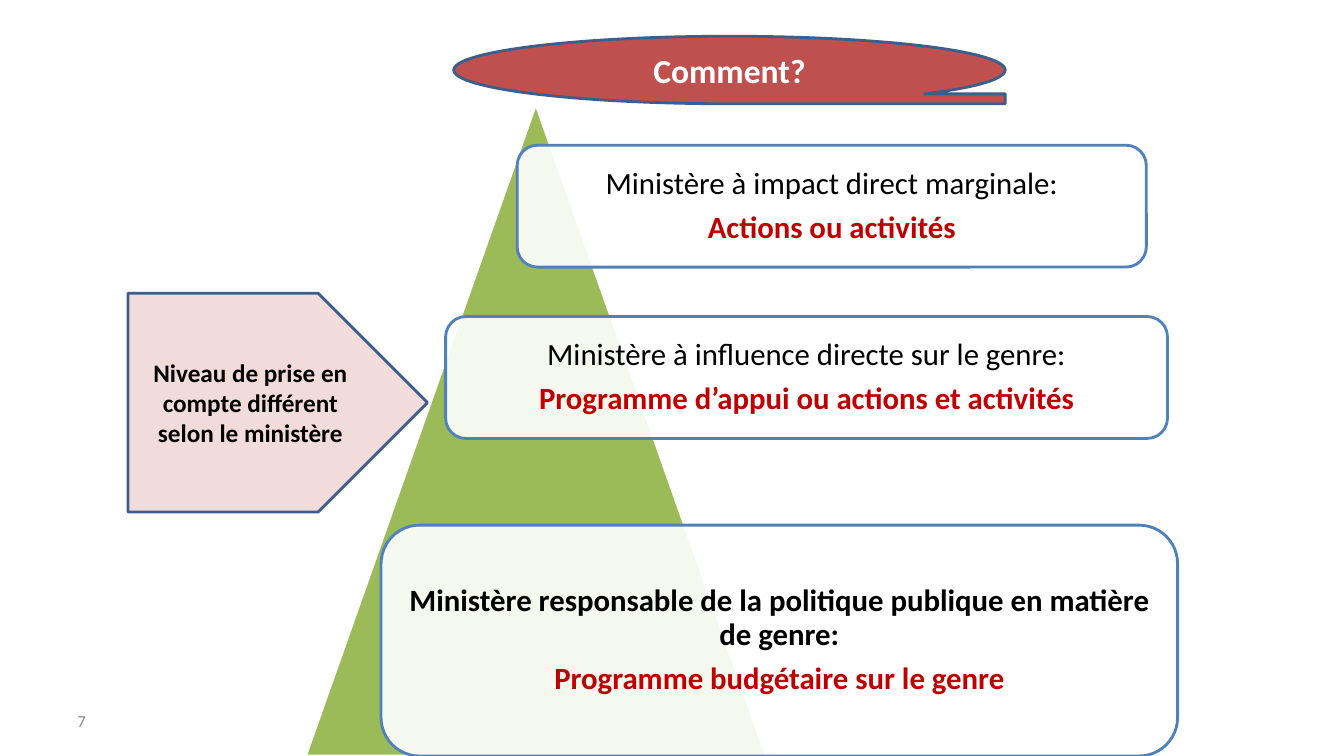
"""Build the slide on how ministries take gender into account."""
from dataclasses import dataclass

from lxml import etree
from pptx import Presentation
from pptx import util as u
from pptx.dml.color import RGBColor
from pptx.enum import shapes, text
from pptx.oxml.ns import qn
from pptx.shapes.autoshape import Shape
from pptx.slide import Slide
from pptx.text.text import TextFrame

WHITE = RGBColor(0xFF, 0xFF, 0xFF)
BLACK = RGBColor(0x00, 0x00, 0x00)
GREY = RGBColor(0x8C, 0x8C, 0x8C)
GREEN = RGBColor(0x9B, 0xBB, 0x59)
BLUE = RGBColor(0x4F, 0x81, 0xBD)
DARK_BLUE = RGBColor(0x3A, 0x5F, 0x8C)
RED = RGBColor(0xC0, 0x50, 0x4D)
DARK_RED = RGBColor(0xC0, 0x00, 0x00)
PINK = RGBColor(0xF2, 0xDC, 0xDB)
FONT = "Calibri"


@dataclass(frozen=True)
class Box:
    left: float
    top: float
    width: float
    height: float

    def lengths(self) -> tuple[u.Length, ...]:
        return tuple(u.Inches(value) for value in (self.left, self.top, self.width, self.height))


@dataclass(frozen=True)
class Line:
    words: str
    size: int
    color: RGBColor
    bold: bool = True


@dataclass(frozen=True)
class Level:
    box: Box
    ministry: str
    action: str
    bold: bool = False


TITLE_BOX = Box(4.5, 0.36, 5.47, 0.67)
PYRAMID_BOX = Box(3.03, 1.03, 4.57, 6.47)
ARROW_BOX = Box(1.27, 2.91, 2.97, 2.17)
NUMBER_BOX = Box(0.67, 6.95, 3.11, 0.4)
LEVELS = (
    Level(Box(5.13, 1.44, 6.24, 1.21), "Ministère à impact direct marginale:", "Actions ou activités"),
    Level(Box(4.42, 3.14, 7.16, 1.21), "Ministère à influence directe sur le genre:",
          "Programme d’appui ou actions et activités"),
    Level(Box(3.78, 5.21, 7.9, 2.29), "Ministère responsable de la politique publique en matière de genre:",
          "Programme budgétaire sur le genre", True),
)


def add_figure(slide: Slide, kind: shapes.MSO_SHAPE, box: Box, fill: RGBColor, outline: RGBColor) -> Shape:
    shape = slide.shapes.add_shape(kind, *box.lengths())
    shape.shadow.inherit = False
    shape.fill.solid()
    shape.fill.fore_color.rgb = fill
    shape.line.color.rgb = outline
    shape.line.width = u.Pt(2)
    return shape


def write(frame: TextFrame, *lines: Line, align: text.PP_ALIGN = text.PP_ALIGN.CENTER) -> None:
    frame.word_wrap = True
    frame.auto_size = text.MSO_AUTO_SIZE.NONE
    frame.vertical_anchor = text.MSO_ANCHOR.MIDDLE
    for index, line in enumerate(lines):
        paragraph = frame.add_paragraph() if index else frame.paragraphs[0]
        paragraph.text = line.words
        paragraph.alignment = align
        paragraph.font.name = FONT
        paragraph.font.size = u.Pt(line.size)
        paragraph.font.bold = line.bold
        paragraph.font.color.rgb = line.color


def add_level(slide: Slide, level: Level) -> None:
    card = add_figure(slide, shapes.MSO_SHAPE.ROUNDED_RECTANGLE, level.box, WHITE, BLUE)
    fill_color = card.element.spPr.find(qn("a:solidFill"))[0]
    etree.SubElement(fill_color, qn("a:alpha"), val="90000")
    frame = card.text_frame
    frame.margin_left = frame.margin_right = frame.margin_top = frame.margin_bottom = u.Inches(0.09)
    write(frame, Line(level.ministry, 22, BLACK, level.bold), Line(level.action, 22, DARK_RED))
    for paragraph in frame.paragraphs:
        paragraph.line_spacing = 0.9
        paragraph.space_after = u.Pt(7.7)


def add_title(slide: Slide) -> None:
    tape = add_figure(slide, shapes.MSO_SHAPE.FLOWCHART_SEQUENTIAL_ACCESS_STORAGE, TITLE_BOX, RED, DARK_BLUE)
    title = slide.shapes.title
    title.left, title.top, title.width, title.height = TITLE_BOX.lengths()
    write(title.text_frame, Line("Comment?", 24, WHITE))
    tape.element.addnext(title.element)


def main() -> None:
    presentation = Presentation()
    presentation.slide_width = u.Inches(13.33)
    presentation.slide_height = u.Inches(7.5)
    slide = presentation.slides.add_slide(presentation.slide_layouts.get_by_name("Title Only"))

    add_figure(slide, shapes.MSO_SHAPE.ISOSCELES_TRIANGLE, PYRAMID_BOX, GREEN, WHITE)
    for level in LEVELS:
        add_level(slide, level)
    number = slide.shapes.add_textbox(*NUMBER_BOX.lengths())
    write(number.text_frame, Line("7", 12, GREY, False), align=text.PP_ALIGN.LEFT)
    add_title(slide)
    arrow = add_figure(slide, shapes.MSO_SHAPE.PENTAGON, ARROW_BOX, PINK, DARK_BLUE)
    write(arrow.text_frame, Line("Niveau de prise en compte différent selon le ministère", 18, BLACK))

    presentation.save("out.pptx")


if __name__ == "__main__":
    main()
